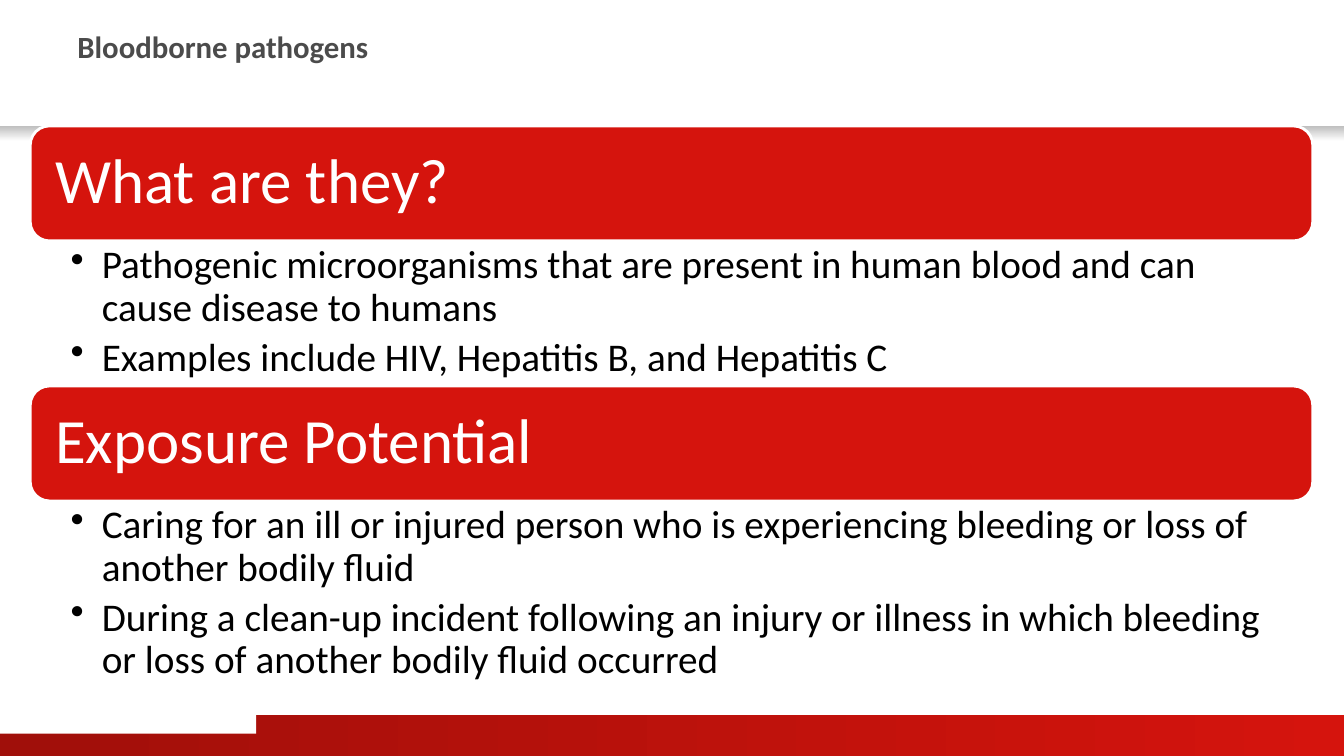
from lxml import etree
from pptx import Presentation
from pptx.dml.color import RGBColor
from pptx.enum.shapes import MSO_SHAPE
from pptx.enum.text import MSO_ANCHOR, PP_ALIGN
from pptx.oxml.ns import qn
from pptx.util import Pt

PX = 9144
RECT, ROUND = MSO_SHAPE.RECTANGLE, MSO_SHAPE.ROUNDED_RECTANGLE
TOP, MIDDLE = MSO_ANCHOR.TOP, MSO_ANCHOR.MIDDLE
LEFT = PP_ALIGN.LEFT
RED = RGBColor(0xD5, 0x14, 0x0D)
DARK = RGBColor(0xA0, 0x0F, 0x0A)
WHITE = RGBColor(0xFF, 0xFF, 0xFF)
BLACK = RGBColor(0, 0, 0)
GREY = RGBColor(0x4B, 0x4B, 0x4B)
SHADE = RGBColor(0xBE, 0xBE, 0xBE)
FONT = "Calibri"
WIDE, HIGH = 1333, 750
HEAD = 114
TOPICS = [
    ("What are they?", 144, [
        "Pathogenic microorganisms that are present in human blood and can cause disease to humans",
        "Examples include HIV, Hepatitis B, and Hepatitis C",
    ]),
    ("Exposure Potential", 183, [
        "Caring for an ill or injured person who is experiencing bleeding or loss of another bodily fluid",
        "During a clean-up incident following an injury or illness in which bleeding or loss of another bodily fluid occurred",
    ]),
]


def scale(*box):
    return [n * PX for n in box]


def block(slide, kind, box, color, end=None, angle=0):
    shape = slide.shapes.add_shape(kind, *scale(*box))
    shape.shadow.inherit = False
    shape.line.fill.background()
    if end is None:
        shape.fill.solid()
        shape.fill.fore_color.rgb = color
    else:
        shape.fill.gradient()
        shape.fill.gradient_angle = angle
        for stop, tint, spot in zip(shape.fill.gradient_stops, (color, end), (0, 1)):
            stop.color.rgb = tint
            stop.position = spot
    return shape


def write(shape, lines, size, color, inset, anchor=TOP, space=0.9, after=0, bold=False, dots=False):
    frame = shape.text_frame
    frame.word_wrap = True
    frame.vertical_anchor = anchor
    frame.margin_left, frame.margin_top, frame.margin_right, frame.margin_bottom = scale(*inset)
    frame.text = "\n".join(lines)
    for para in frame.paragraphs:
        if dots:
            props = para._p.get_or_add_pPr()
            props.set("marL", str(31 * PX))
            props.set("indent", str(-31 * PX))
            etree.SubElement(props, qn("a:buChar")).set("char", "•")
        para.alignment = LEFT
        para.line_spacing = space
        para.space_after = Pt(after)
        for run in para.runs:
            run.font.name = FONT
            run.font.size = Pt(size)
            run.font.bold = bold
            run.font.color.rgb = color


def frame(slide, wide, high):
    block(slide, RECT, (0, high - 41, wide, 41), DARK, RED)
    block(slide, RECT, (0, high - 72, 254, 50), WHITE)
    block(slide, RECT, (0, 125, wide, 15), SHADE, WHITE, 270)


def title(slide, box, text):
    shape = slide.shapes.add_textbox(*scale(*box))
    write(shape, [text], 22, GREY, (10, 5, 10, 5), space=0.95, bold=True)


def topic(slide, box, head, points):
    left, top, wide, high = box
    bar = block(slide, ROUND, (left, top, wide, HEAD), RED)
    bar.line.color.rgb = WHITE
    bar.line.width = Pt(2)
    write(bar, [head], 45, WHITE, (19, 19, 19, 19), anchor=MIDDLE)
    body = slide.shapes.add_textbox(*scale(left, top + HEAD, wide, high - HEAD))
    write(body, points, 28, BLACK, (40, 4, 22, 4), after=5.6, dots=True)


def main():
    deck = Presentation()
    deck.slide_width, deck.slide_height = scale(WIDE, HIGH)
    slide = deck.slides.add_slide(deck.slide_layouts[6])
    frame(slide, WIDE, HIGH)
    title(slide, (67, 25, 1200, 100), "Bloodborne pathogens")
    top = 125
    for head, body, points in TOPICS:
        high = HEAD + body
        topic(slide, (30, top, 1272, high), head, points)
        top += high
    deck.save("out.pptx")


if __name__ == "__main__":
    main()
